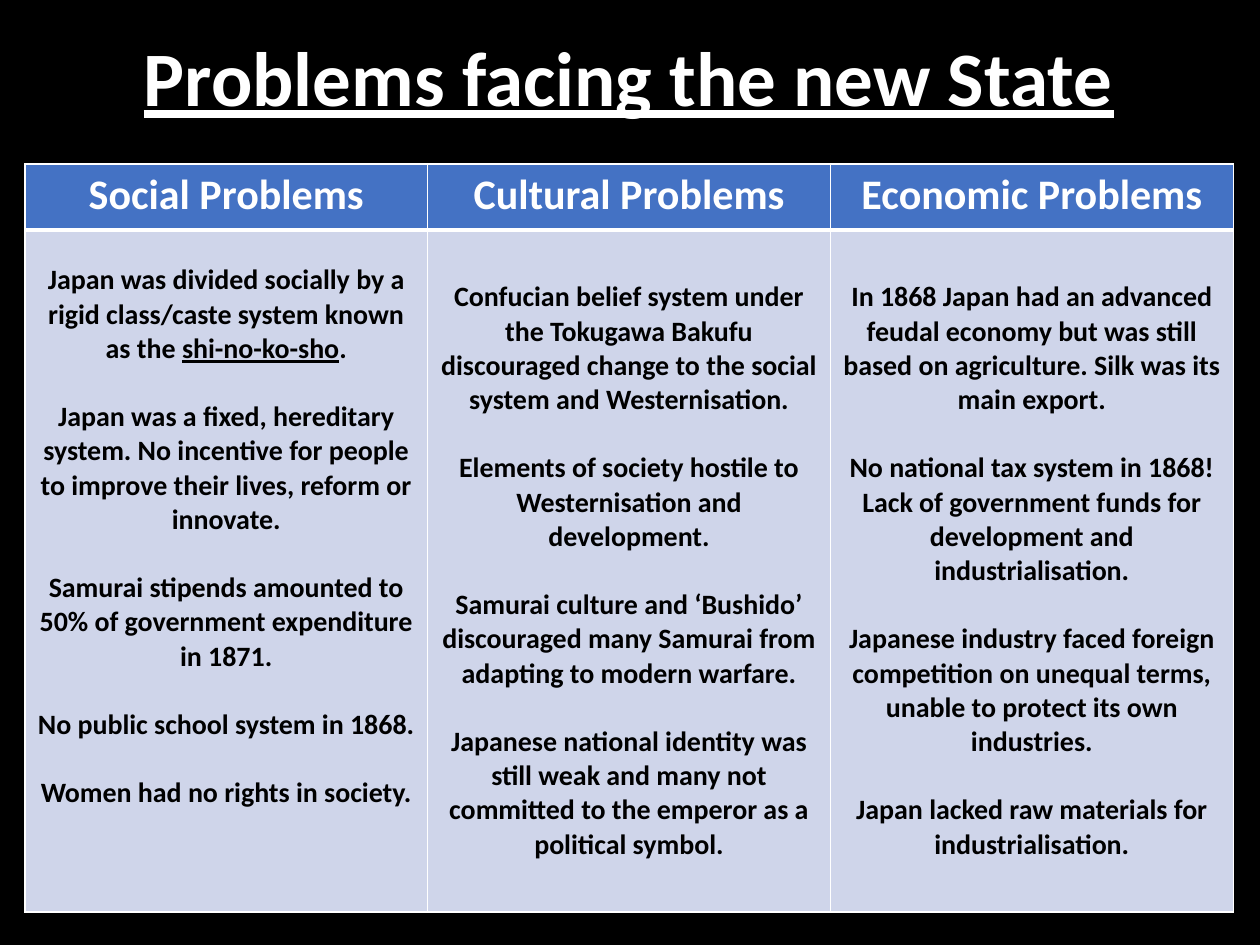
from lxml import etree
from pptx import Presentation
from pptx.dml.color import RGBColor
from pptx.enum.text import MSO_ANCHOR, PP_ALIGN
from pptx.oxml.ns import qn
from pptx.util import Pt

CENTER = PP_ALIGN.CENTER
MIDDLE = MSO_ANCHOR.MIDDLE
TOP = MSO_ANCHOR.TOP
FONT = "Calibri"
COLORS = {"background": "000000", "white": "FFFFFF", "black": "000000",
          "header": "4472C4", "body": "CFD5EA"}
UNDERLINED_TERM = "shi-no-ko-sho"
PARAGRAPH_GAP = 19.5
HEADER_HEIGHT = 37.8
PROBLEMS = {
    "Social Problems": [
        "Japan was divided socially by a rigid class/caste system known as the shi-no-ko-sho.",
        "Japan was a fixed, hereditary system. No incentive for people to improve their lives, "
        "reform or innovate.",
        "Samurai stipends amounted to 50% of government expenditure in 1871.",
        "No public school system in 1868.",
        "Women had no rights in society.",
    ],
    "Cultural Problems": [
        "Confucian belief system under the Tokugawa Bakufu discouraged change to the social "
        "system and Westernisation.",
        "Elements of society hostile to Westernisation and development.",
        "Samurai culture and ‘Bushido’ discouraged many Samurai from adapting to modern warfare.",
        "Japanese national identity was still weak and many not committed to the emperor as a "
        "political symbol.",
    ],
    "Economic Problems": [
        "In 1868 Japan had an advanced feudal economy but was still based on agriculture. "
        "Silk was its main export.",
        "No national tax system in 1868! Lack of government funds for development and "
        "industrialisation.",
        "Japanese industry faced foreign competition on unequal terms, unable to protect its "
        "own industries.",
        "Japan lacked raw materials for industrialisation.",
    ],
}


def color(name):
    """Return the named colour."""
    return RGBColor.from_string(COLORS[name])


def add_span(para, text, size, color_name, underline=False):
    """Add a bold span of text to a paragraph."""
    span = para.add_run()
    span.text = text
    span.font.name = FONT
    span.font.size = Pt(size)
    span.font.bold = True
    span.font.underline = underline
    span.font.color.rgb = color(color_name)


def add_title(page, left, top, width, height):
    """Place the underlined slide title."""
    frame = page.shapes.add_textbox(Pt(left), Pt(top), Pt(width), Pt(height)).text_frame
    frame.word_wrap = True
    frame.vertical_anchor = MIDDLE
    para = frame.paragraphs[0]
    para.alignment = CENTER
    para.line_spacing = 0.9
    add_span(para, "Problems facing the new State", 44, "white", True)


def style_cell(cell, fill_name, top_width, bottom_width):
    """Give a cell white borders and a solid fill."""
    properties = cell._tc.get_or_add_tcPr()
    widths = {"a:lnL": 1, "a:lnR": 1, "a:lnT": top_width, "a:lnB": bottom_width}
    for tag, width in widths.items():
        line = etree.SubElement(properties, qn(tag), w=str(Pt(width)))
        fill = etree.SubElement(line, qn("a:solidFill"))
        etree.SubElement(fill, qn("a:srgbClr"), val=COLORS["white"])
    cell.fill.solid()
    cell.fill.fore_color.rgb = color(fill_name)


def fill_header(cell, heading):
    """Write a column heading."""
    style_cell(cell, "header", 1, 3)
    cell.vertical_anchor = TOP
    para = cell.text_frame.paragraphs[0]
    para.alignment = CENTER
    add_span(para, heading, 24, "white")


def fill_body(cell, statements):
    """Write the statements of one column, spaced one line apart."""
    style_cell(cell, "body", 3, 1)
    cell.vertical_anchor = MIDDLE
    frame = cell.text_frame
    for index, statement in enumerate(statements):
        para = frame.add_paragraph() if index else frame.paragraphs[0]
        para.alignment = CENTER
        if index:
            para.space_before = Pt(PARAGRAPH_GAP)
        before, term, after = statement.partition(UNDERLINED_TERM)
        for text in filter(None, (before, term, after)):
            add_span(para, text, 16, "black", text == UNDERLINED_TERM)


def add_problem_table(page, left, top, width, height):
    """Place the table with one column for each kind of problem."""
    table = page.shapes.add_table(
        2, len(PROBLEMS), Pt(left), Pt(top), Pt(width), Pt(height)).table
    table.rows[0].height = Pt(HEADER_HEIGHT)
    table.rows[1].height = Pt(height - HEADER_HEIGHT)
    for column, (heading, statements) in enumerate(PROBLEMS.items()):
        table.columns[column].width = Pt(width / len(PROBLEMS))
        fill_header(table.cell(0, column), heading)
        fill_body(table.cell(1, column), statements)
    table.cell(1, 0).margin_bottom = Pt(3.6 + 2 * PARAGRAPH_GAP)


def main():
    """Build and save the deck."""
    deck = Presentation()
    deck.slide_width, deck.slide_height = Pt(720), Pt(540)
    page = deck.slides.add_slide(deck.slide_layouts[6])
    page.background.fill.solid()
    page.background.fill.fore_color.rgb = color("background")
    add_title(page, 49, 13, 620.6, 67)
    add_problem_table(page, 14.2, 93.6, 690.6, 427.5)
    deck.save("out.pptx")


if __name__ == "__main__":
    main()
